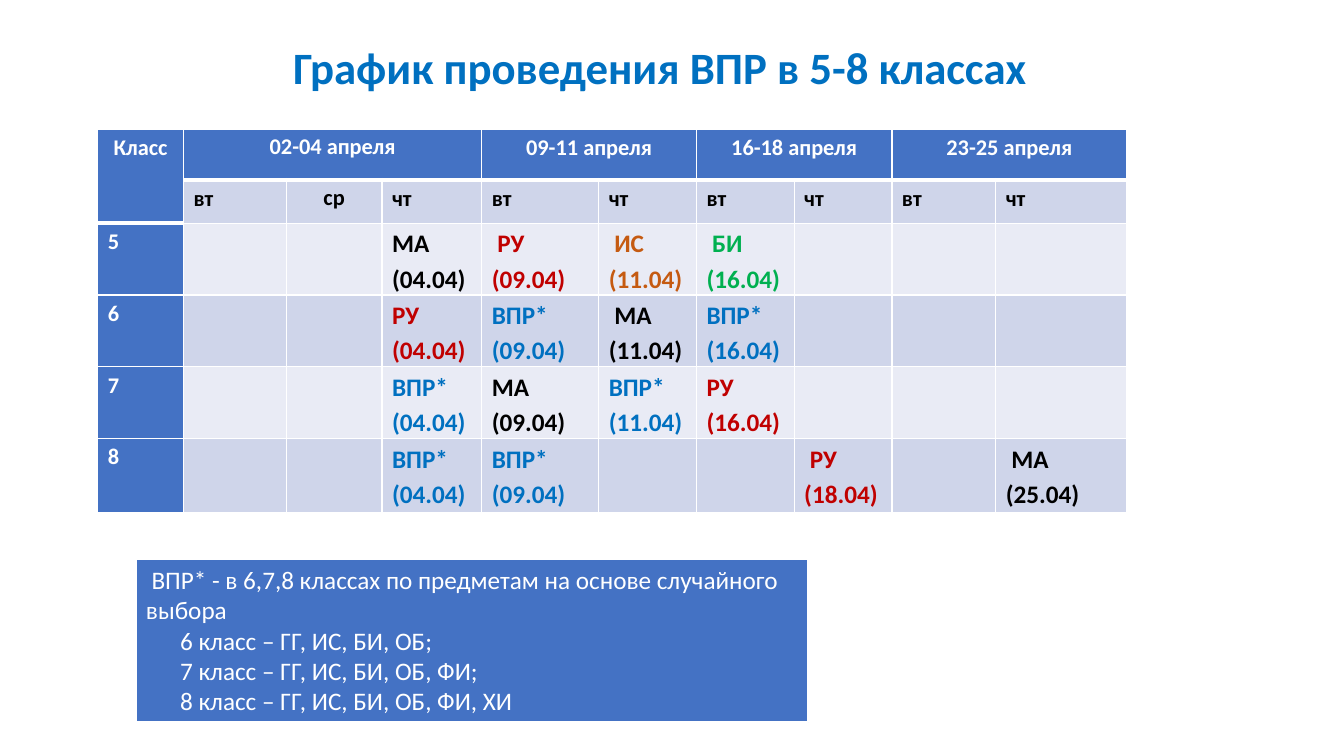
import pptx
import pptx.dml.color
import pptx.enum.shapes
import pptx.enum.text
import pptx.oxml
import pptx.oxml.ns
import pptx.util

Pt = pptx.util.Pt
ALIGN = pptx.enum.text.PP_ALIGN
WHITE, BLACK, BLUE = "FFFFFF", "000000", "4472C4"
BANDS = ["E9EBF5", "CFD5EA"]
SUBJECT_COLOURS = {"МА": BLACK, "РУ": "C00000", "ИС": "C55A11", "БИ": "00B050", "ВПР*": "0070C0"}

COL_WIDTHS = [61.2, 73.44, 68.4, 71.28, 83.52, 69.84, 69.84, 69.84, 74.16, 93.6]
ROW_HEIGHTS = [36, 31, 51.3, 51.3, 51.3, 52.9]
WEEKS = [("02-04 апреля", 1, 3), ("09-11 апреля", 4, 5), ("16-18 апреля", 6, 7), ("23-25 апреля", 8, 9)]
DAYS = ["вт", "ср", "чт", "вт", "чт", "вт", "чт", "вт", "чт"]
EXAMS = {
    "5": {3: ("МА", "04.04"), 4: ("РУ", "09.04"), 5: ("ИС", "11.04"), 6: ("БИ", "16.04")},
    "6": {3: ("РУ", "04.04"), 4: ("ВПР*", "09.04"), 5: ("МА", "11.04"), 6: ("ВПР*", "16.04")},
    "7": {3: ("ВПР*", "04.04"), 4: ("МА", "09.04"), 5: ("ВПР*", "11.04"), 6: ("РУ", "16.04")},
    "8": {3: ("ВПР*", "04.04"), 4: ("ВПР*", "09.04"), 7: ("РУ", "18.04"), 9: ("МА", "25.04")},
}
INDENTED = {("5", 4), ("5", 5), ("5", 6), ("6", 5), ("8", 7), ("8", 9)}
NOTE = [
    "ВПР* - в 6,7,8 классах по предметам на основе случайного выбора",
    "6 класс – ГГ, ИС, БИ, ОБ;",
    "7 класс – ГГ, ИС, БИ, ОБ, ФИ;",
    "8 класс – ГГ, ИС, БИ, ОБ, ФИ, ХИ",
]


def rgb(colour):
    """Turn a hex string into a colour."""
    return pptx.dml.color.RGBColor.from_string(colour)


def add_lines(tf, lines, size, colour, bold=False, align=ALIGN.LEFT, spacing=1.0, indents=()):
    """Write one paragraph per line, with optional first-line indents."""
    for i, line in enumerate(lines):
        p = tf.paragraphs[0] if i == 0 else tf.add_paragraph()
        p.alignment = align
        p.line_spacing = spacing
        if i < len(indents):
            p._p.get_or_add_pPr().set("indent", str(Pt(indents[i])))
        r = p.add_run()
        r.text = line
        r.font.name = "Calibri"
        r.font.size = Pt(size)
        r.font.bold = bold
        r.font.color.rgb = rgb(colour)


def style_cell(cell, fill, top=1, bottom=1):
    """Give a cell its margins, white borders and fill."""
    cell.margin_left = cell.margin_right = Pt(7.2)
    cell.margin_top, cell.margin_bottom = Pt(0.7), 0
    tcPr = cell._tc.get_or_add_tcPr()
    for side, width in (("L", 1), ("R", 1), ("T", top), ("B", bottom)):
        tcPr.append(pptx.oxml.parse_xml(
            f'<a:ln{side} {pptx.oxml.ns.nsdecls("a")} w="{Pt(width)}"><a:solidFill>'
            f'<a:srgbClr val="{WHITE}"/></a:solidFill></a:ln{side}>'))
    cell.fill.solid()
    cell.fill.fore_color.rgb = rgb(fill)


def style_grid(table):
    """Set the sizes, bands and borders of the whole table."""
    table.first_row = table.horz_banding = False
    for column, width in zip(table.columns, COL_WIDTHS):
        column.width = Pt(width)
    for row, height in zip(table.rows, ROW_HEIGHTS):
        row.height = Pt(height)
    for y in range(len(ROW_HEIGHTS)):
        for x in range(len(COL_WIDTHS)):
            head_end = 1 if x == 0 else 0
            fill = BLUE if x == 0 or y == 0 else BANDS[y % 2]
            style_cell(table.cell(y, x), fill, 3 if y == head_end + 1 else 1,
                       3 if y == head_end or y == x == 0 else 1)


def add_label(cell, text, colour, align=ALIGN.LEFT):
    """Write a heading into a table cell."""
    add_lines(cell.text_frame, [text], 16, colour, True, align, 1.15)


def add_schedule(s):
    """Add the table of exam dates by class."""
    table = s.shapes.add_table(len(ROW_HEIGHTS), len(COL_WIDTHS), Pt(69.84), Pt(92.4),
                               Pt(sum(COL_WIDTHS)), Pt(sum(ROW_HEIGHTS))).table
    style_grid(table)
    table.cell(0, 0).merge(table.cell(1, 0))
    add_label(table.cell(0, 0), "Класс", WHITE, ALIGN.CENTER)
    for week, first, last in WEEKS:
        table.cell(0, first).merge(table.cell(0, last))
        add_label(table.cell(0, first), week, WHITE, ALIGN.CENTER)
    for x, day in enumerate(DAYS, 1):
        add_label(table.cell(1, x), day, BLACK, ALIGN.CENTER if day == "ср" else ALIGN.LEFT)
    for cell in (table.cell(0, 1), table.cell(1, 2)):
        cell.margin_left = cell.margin_right = cell.margin_top = 0
    for y, (grade, exams) in enumerate(EXAMS.items(), 2):
        add_label(table.cell(y, 0), grade, WHITE)
        for x, (subject, date) in exams.items():
            add_lines(table.cell(y, x).text_frame, [subject, f"({date})"], 18, SUBJECT_COLOURS[subject],
                      True, spacing=1.15, indents=[4] if (grade, x) in INDENTED else [])


def add_note(s):
    """Add the box that explains the starred exams."""
    sp = s.shapes.add_shape(pptx.enum.shapes.MSO_SHAPE.RECTANGLE, Pt(97.2), Pt(399.6), Pt(480.24), Pt(116.3))
    sp.shadow.inherit = False
    sp.fill.solid()
    sp.fill.fore_color.rgb = rgb(BLUE)
    sp.line.color.rgb = rgb(WHITE)
    sp.line.width = Pt(1.5)
    tf = sp.text_frame
    tf.word_wrap = True
    tf.vertical_anchor = pptx.enum.text.MSO_ANCHOR.TOP
    add_lines(tf, NOTE, 18, WHITE, indents=[4, 24.4, 24.4, 24.4])


def add_title(s):
    """Add the slide title."""
    tf = s.shapes.add_textbox(Pt(202.3), Pt(24.5), Pt(543.6), Pt(46)).text_frame
    tf.word_wrap = False
    add_lines(tf, ["График проведения ВПР в 5-8 классах"], 32, "0070C0", True)


def main():
    """Build the slide and save it."""
    prs = pptx.Presentation()
    prs.slide_width, prs.slide_height = Pt(960), Pt(540)
    s = prs.slides.add_slide(prs.slide_layouts[6])
    add_schedule(s)
    add_note(s)
    add_title(s)
    prs.save("out.pptx")


if __name__ == "__main__":
    main()
